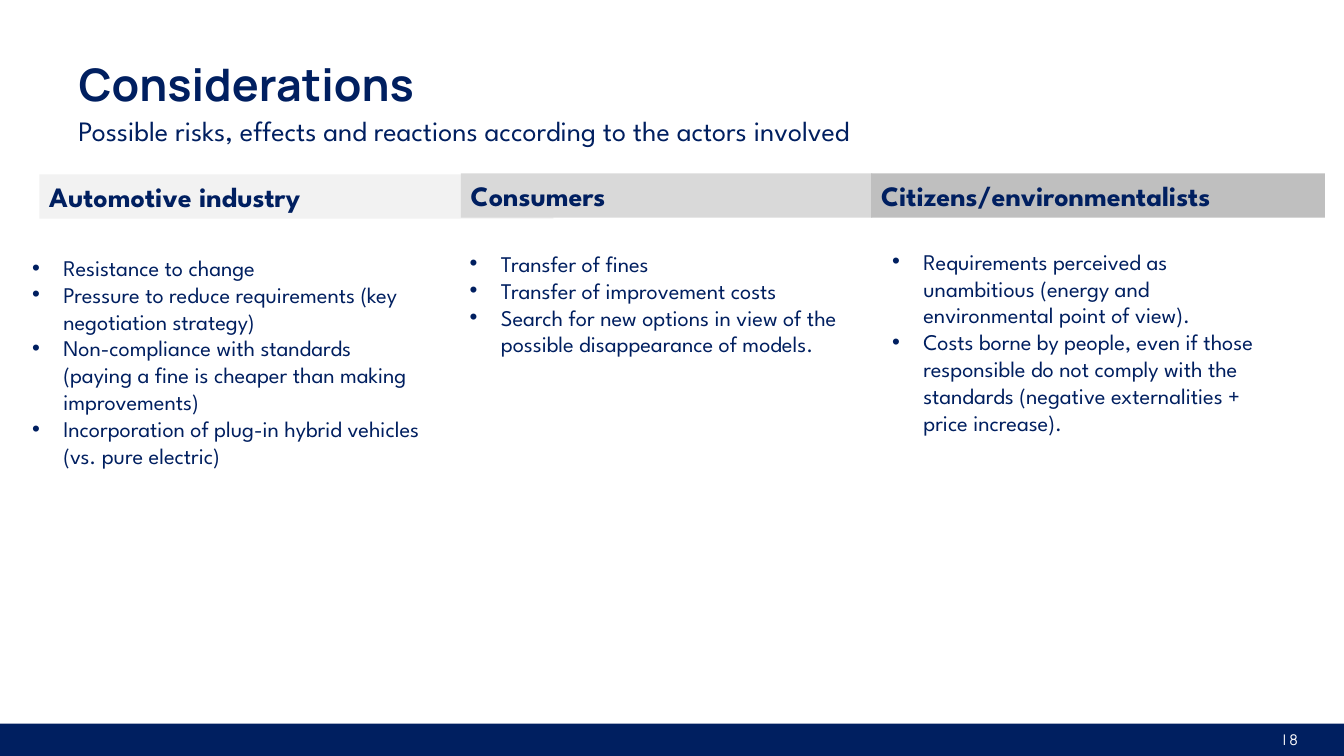
"""Build the Considerations slide: three actors with their possible risks and reactions."""
from dataclasses import dataclass

import pptx
import pptx.dml.color
import pptx.enum.shapes
import pptx.enum.text
import pptx.oxml.ns
import pptx.shapes.autoshape
import pptx.shapes.base
import pptx.slide
import pptx.text.text
import pptx.util
from lxml import etree

Inches = pptx.util.Inches
RGBColor = pptx.dml.color.RGBColor
Anchor = pptx.enum.text.MSO_ANCHOR
Align = pptx.enum.text.PP_ALIGN
AutoSize = pptx.enum.text.MSO_AUTO_SIZE

NAVY = RGBColor(0x00, 0x1F, 0x60)
WHITE = RGBColor(0xFF, 0xFF, 0xFF)
LIGHT_GREY = RGBColor(0xF2, 0xF2, 0xF2)
MIDDLE_GREY = RGBColor(0xD9, 0xD9, 0xD9)
DARK_GREY = RGBColor(0xBF, 0xBF, 0xBF)

HEADING_FONT = "Manrope"
BODY_FONT = "League Spartan"
BULLET_INDENT = Inches(0.31)


@dataclass(frozen=True)
class Box:
    left: float
    top: float
    width: float
    height: float

    def lengths(self) -> tuple[int, ...]:
        return tuple(Inches(value) for value in (self.left, self.top, self.width, self.height))


@dataclass(frozen=True)
class Actor:
    name: str
    fill: RGBColor
    header_box: Box
    list_box: Box
    points: tuple[str, ...]


ACTORS = (
    Actor(
        "Automotive industry", LIGHT_GREY,
        Box(0.39, 1.73, 5.1, 0.44), Box(0.22, 2.47, 4.08, 2.49),
        (
            "Resistance to change",
            "Pressure to reduce requirements (key negotiation strategy)",
            "Non-compliance with standards (paying a fine is cheaper than making improvements)",
            "Incorporation of plug-in hybrid vehicles (vs. pure electric)",
        ),
    ),
    Actor(
        "Consumers", MIDDLE_GREY,
        Box(4.57, 1.72, 4.08, 0.44), Box(4.56, 2.43, 4.08, 1.45),
        (
            "Transfer of fines",
            "Transfer of improvement costs",
            "Search for new options in view of the possible disappearance of models.",
        ),
    ),
    Actor(
        "Citizens/environmentalists", DARK_GREY,
        Box(8.64, 1.72, 4.5, 0.44), Box(8.75, 2.41, 4.08, 1.99),
        (
            "Requirements perceived as unambitious (energy and environmental point of view).",
            "Costs borne by people, even if those responsible do not comply with the "
            "standards (negative externalities + price increase).",
        ),
    ),
)


def set_text(shape: pptx.shapes.base.BaseShape, text: str, size: float, font_name: str,
             color: RGBColor = NAVY, bold: bool = False, anchor: Anchor = Anchor.TOP,
             alignment: Align = Align.LEFT, line_spacing: float = 1.0,
             auto_size: AutoSize = AutoSize.NONE) -> None:
    text_frame = shape.text_frame
    text_frame.text = text
    text_frame.word_wrap = True
    text_frame.auto_size = auto_size
    text_frame.vertical_anchor = anchor
    for paragraph in text_frame.paragraphs:
        paragraph.alignment = alignment
        paragraph.line_spacing = line_spacing
        for run in paragraph.runs:
            run.font.name = font_name
            run.font.size = pptx.util.Pt(size)
            run.font.bold = bold
            run.font.color.rgb = color


def add_bullet(paragraph: pptx.text.text._Paragraph) -> None:
    properties = paragraph._p.get_or_add_pPr()
    properties.set("marL", str(BULLET_INDENT))
    properties.set("indent", str(-BULLET_INDENT))
    bullet_font = etree.SubElement(properties, pptx.oxml.ns.qn("a:buFont"))
    bullet_font.set("typeface", "Arial")
    bullet = etree.SubElement(properties, pptx.oxml.ns.qn("a:buChar"))
    bullet.set("char", "•")


def add_rectangle(slide: pptx.slide.Slide, box: Box,
                  fill: RGBColor) -> pptx.shapes.autoshape.Shape:
    shape = slide.shapes.add_shape(pptx.enum.shapes.MSO_SHAPE.RECTANGLE, *box.lengths())
    shape.shadow.inherit = False
    shape.fill.solid()
    shape.fill.fore_color.rgb = fill
    shape.line.fill.background()
    return shape


def add_title(slide: pptx.slide.Slide) -> None:
    title = slide.shapes.title
    title.left, title.top, title.width, title.height = Box(0.68, 0.18, 10.36, 0.97).lengths()
    set_text(title, "Considerations", 32, HEADING_FONT, bold=True,
             anchor=Anchor.BOTTOM, line_spacing=0.9)
    subtitle = slide.shapes.add_textbox(*Box(0.68, 1.15, 10.36, 0.32).lengths())
    set_text(subtitle, "Possible risks, effects and reactions according to the actors involved",
             20, BODY_FONT, anchor=Anchor.MIDDLE, line_spacing=0.9)


def add_footer(slide: pptx.slide.Slide) -> None:
    add_rectangle(slide, Box(0, 7.18, 13.33, 0.33), NAVY)
    page_number = slide.shapes.add_textbox(*Box(12.18, 7.17, 0.79, 0.33).lengths())
    set_text(page_number, "| 8", 10.5, HEADING_FONT, color=WHITE,
             anchor=Anchor.MIDDLE, alignment=Align.RIGHT)


def add_actor(slide: pptx.slide.Slide, actor: Actor) -> None:
    header = add_rectangle(slide, actor.header_box, actor.fill)
    set_text(header, actor.name, 20, BODY_FONT, bold=True, auto_size=AutoSize.SHAPE_TO_FIT_TEXT)
    point_list = slide.shapes.add_textbox(*actor.list_box.lengths())
    set_text(point_list, "\n".join(actor.points), 16, BODY_FONT,
             auto_size=AutoSize.SHAPE_TO_FIT_TEXT)
    for paragraph in point_list.text_frame.paragraphs:
        add_bullet(paragraph)


def main() -> None:
    presentation = pptx.Presentation()
    presentation.slide_width = Inches(13.33)
    presentation.slide_height = Inches(7.5)
    slide = presentation.slides.add_slide(presentation.slide_layouts.get_by_name("Title Only"))
    add_footer(slide)
    add_title(slide)
    for actor in ACTORS:
        add_actor(slide, actor)
    presentation.save("out.pptx")


if __name__ == "__main__":
    main()
